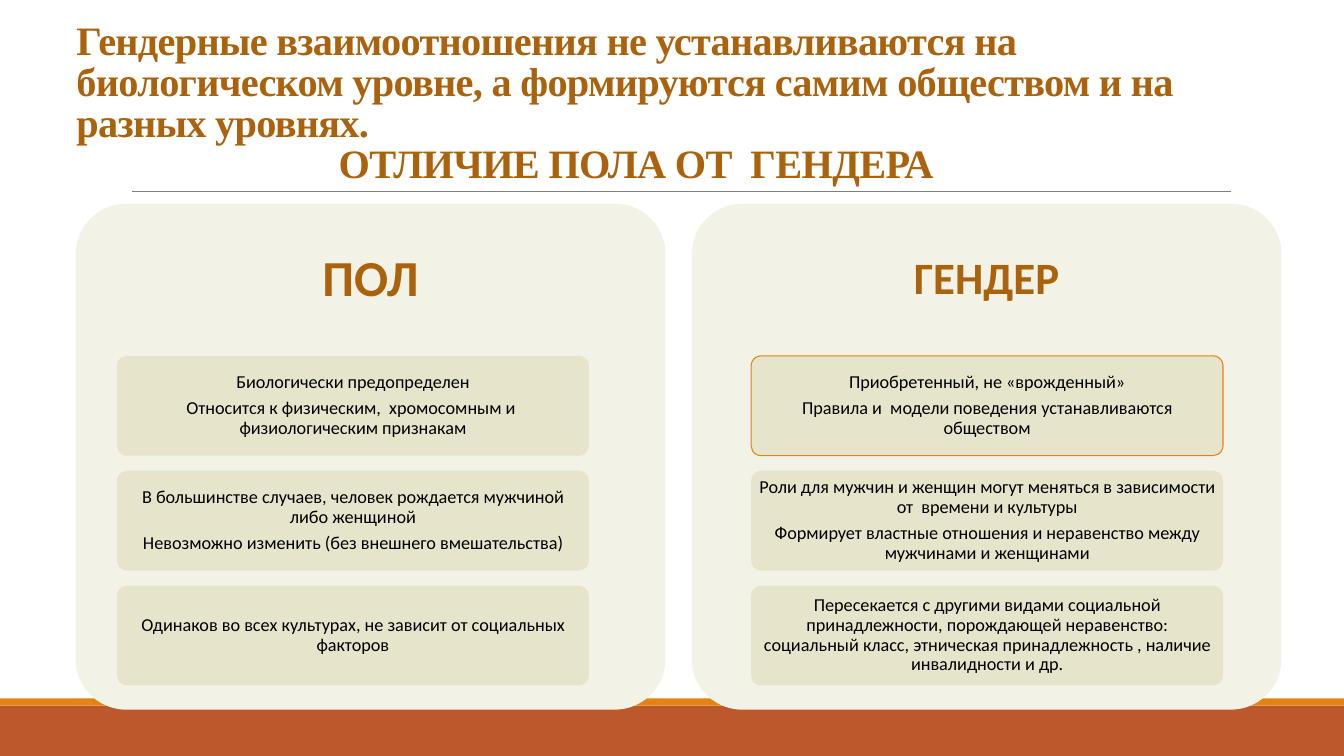
from dataclasses import dataclass

from lxml import etree
from pptx import Presentation
from pptx import util as u
from pptx.dml.color import RGBColor
from pptx.enum import shapes, text
from pptx.oxml import ns

PX = 9144  # EMU per px, 100 px to the inch
WHITE = RGBColor(0xFF, 0xFF, 0xFF)
BLACK = RGBColor(0x00, 0x00, 0x00)
RUST = RGBColor(0xBD, 0x58, 0x2C)
ORANGE = RGBColor(0xE4, 0x83, 0x12)
BROWN = RGBColor(0xAB, 0x62, 0x0D)
GREY = RGBColor(0x80, 0x80, 0x80)
PANEL_FILL = RGBColor(0xF3, 0xF2, 0xE6)
CARD_FILL = RGBColor(0xE7, 0xE4, 0xCC)

SLIDE_WIDTH, SLIDE_HEIGHT = 1333, 750
PANEL_TOP, PANEL_WIDTH, PANEL_HEIGHT = 202, 585, 502
HEADING_HEIGHT = 151
CARD_TOP, CARD_WIDTH, CARD_HEIGHT, CARD_PITCH = 353, 468, 99, 114


@dataclass(frozen=True)
class Box:
    left: int
    top: int
    width: int
    height: int

    def emu(self) -> list[int]:
        return [side * PX for side in (self.left, self.top, self.width, self.height)]


@dataclass(frozen=True)
class Panel:
    heading: str
    heading_size: int
    heading_margin: int
    left: int
    card_left: int
    cards: list[list[str]]
    outlined_card: int | None = None


PANELS = [
    Panel("ПОЛ", 36, 15, 75, 116, [
        ["Биологически предопределен",
         "Относится к физическим,  хромосомным и  физиологическим признакам"],
        ["В большинстве случаев, человек рождается мужчиной либо женщиной",
         "Невозможно изменить (без внешнего вмешательства)"],
        ["Одинаков во всех культурах, не зависит от социальных факторов"],
    ]),
    Panel("ГЕНДЕР", 32, 13, 686, 745, [
        ["Приобретенный, не «врожденный»",
         "Правила и  модели поведения устанавливаются обществом"],
        ["Роли для мужчин и женщин могут меняться в зависимости от  времени и культуры",
         "Формирует властные отношения и неравенство между мужчинами и женщинами"],
        ["Пересекается с другими видами социальной принадлежности, порождающей "
         "неравенство: социальный класс, этническая принадлежность , наличие "
         "инвалидности и др."],
    ], outlined_card=0),
]
TITLE = [
    "Гендерные взаимоотношения не устанавливаются на биологическом уровне, "
    "а формируются самим обществом и на разных уровнях.",
    "ОТЛИЧИЕ ПОЛА ОТ  ГЕНДЕРА",
]


def apply(target, values: dict) -> None:
    for name, value in values.items():
        setattr(target, name, value)


def add_block(slide, kind, box: Box, fill: RGBColor, line: RGBColor | None = None):
    """Add a filled shape, outlined only when a line colour is given."""
    shape = slide.shapes.add_shape(kind, *box.emu())
    shape.shadow.inherit = False
    shape.fill.solid()
    shape.fill.fore_color.rgb = fill
    if line is None:
        shape.line.fill.background()
    else:
        shape.line.color.rgb = line
        shape.line.width = u.Pt(0.75)
    if kind == shapes.MSO_SHAPE.ROUNDED_RECTANGLE:
        shape.adjustments[0] = 0.1
    return shape


def write(shape, lines: list[str], margins: tuple[int, int], anchor,
          font: dict, color: RGBColor, layout: dict) -> None:
    """Fill a shape with one paragraph per line, all in the same format."""
    across, down = (margin * PX for margin in margins)
    frame = shape.text_frame
    apply(frame, {"word_wrap": True, "vertical_anchor": anchor,
                  "margin_left": across, "margin_right": across,
                  "margin_top": down, "margin_bottom": down})
    for index, line in enumerate(lines):
        paragraph = frame.paragraphs[0] if index == 0 else frame.add_paragraph()
        apply(paragraph, layout)
        run = paragraph.add_run()
        run.text = line
        apply(run.font, font)
        run.font.color.rgb = color


def add_footer_and_rule(slide) -> None:
    rectangle = shapes.MSO_SHAPE.RECTANGLE
    add_block(slide, rectangle, Box(0, 700, SLIDE_WIDTH, 50), RUST)
    add_block(slide, rectangle, Box(0, 693, SLIDE_WIDTH, 7), ORANGE)
    rule = slide.shapes.add_connector(
        shapes.MSO_CONNECTOR.STRAIGHT, 131 * PX, 190 * PX, 1221 * PX, 190 * PX)
    rule.line.color.rgb = GREY
    rule.line.width = u.Pt(0.5)
    etree.SubElement(rule._element.spPr, ns.qn("a:effectLst"))


def add_title(slide) -> None:
    title = slide.shapes.add_textbox(*Box(66, 31, 1205, 159).emu())
    write(title, TITLE, (10, 5), text.MSO_ANCHOR.BOTTOM,
          {"name": "Times New Roman", "size": u.Pt(28.8), "bold": True}, BROWN,
          {"line_spacing": 0.85, "alignment": text.PP_ALIGN.LEFT})
    for paragraph in title.text_frame.paragraphs:
        paragraph.runs[0]._r.get_or_add_rPr().set("spc", "-50")
    # The second line is indented under the first
    subtitle = title.text_frame.paragraphs[1]
    subtitle._p.get_or_add_pPr().set("marL", str(260 * PX))


def add_panel(slide, panel: Panel) -> None:
    rounded = shapes.MSO_SHAPE.ROUNDED_RECTANGLE
    middle = text.MSO_ANCHOR.MIDDLE
    layout = {"alignment": text.PP_ALIGN.CENTER, "line_spacing": 0.9}

    # Background and heading
    add_block(slide, rounded, Box(panel.left, PANEL_TOP, PANEL_WIDTH, PANEL_HEIGHT),
              PANEL_FILL)
    heading = slide.shapes.add_textbox(
        *Box(panel.left, PANEL_TOP, PANEL_WIDTH, HEADING_HEIGHT).emu())
    write(heading, [panel.heading], (panel.heading_margin, panel.heading_margin), middle,
          {"name": "Calibri", "size": u.Pt(panel.heading_size), "bold": True},
          BROWN, layout)

    # Cards
    for row, lines in enumerate(panel.cards):
        box = Box(panel.card_left, CARD_TOP + row * CARD_PITCH, CARD_WIDTH, CARD_HEIGHT)
        outline = ORANGE if row == panel.outlined_card else None
        card = add_block(slide, rounded, box, CARD_FILL, outline)
        write(card, lines, (4, 3), middle, {"name": "Calibri", "size": u.Pt(13)},
              BLACK, layout | {"space_after": u.Pt(4.55)})


def main() -> None:
    presentation = Presentation()
    apply(presentation, {"slide_width": SLIDE_WIDTH * PX,
                         "slide_height": SLIDE_HEIGHT * PX})
    slide = presentation.slides.add_slide(presentation.slide_layouts[6])
    slide.background.fill.solid()
    slide.background.fill.fore_color.rgb = WHITE
    add_footer_and_rule(slide)
    add_title(slide)
    for panel in PANELS:
        add_panel(slide, panel)
    presentation.save("out.pptx")


if __name__ == "__main__":
    main()
